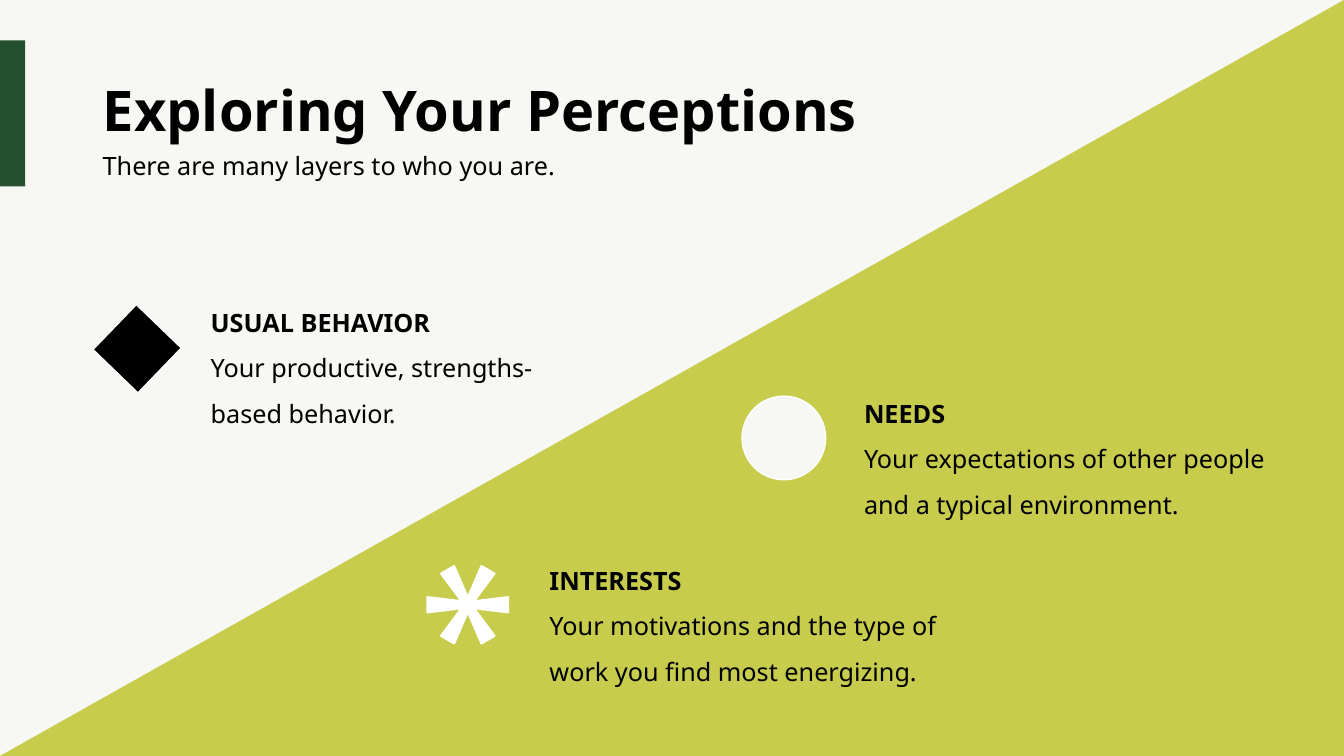
from dataclasses import dataclass
from math import cos, radians, sin

from pptx import Presentation
from pptx.dml.color import RGBColor
from pptx.enum.shapes import MSO_SHAPE
from pptx.enum.text import MSO_ANCHOR, MSO_AUTO_SIZE, PP_ALIGN
from pptx.shapes.autoshape import Shape
from pptx.slide import Slide
from pptx.text.text import TextFrame
from pptx.util import Inches, Pt

RECTANGLE = MSO_SHAPE.RECTANGLE
RIGHT_TRIANGLE = MSO_SHAPE.RIGHT_TRIANGLE
OVAL = MSO_SHAPE.OVAL
MIDDLE = MSO_ANCHOR.MIDDLE
TOP = MSO_ANCHOR.TOP
LEFT = PP_ALIGN.LEFT
NO_AUTOFIT = MSO_AUTO_SIZE.NONE

SLIDE_WIDTH, SLIDE_HEIGHT = 13.33, 7.5


@dataclass(frozen=True)
class Theme:
    font: str = "Noto Sans"
    paper: str = "F7F7F3"
    green: str = "24502F"
    lime: str = "C8CC4D"
    black: str = "000000"
    white: str = "FFFFFF"
    title_size: float = 40
    text_size: float = 18


@dataclass(frozen=True)
class Box:
    left: float
    top: float
    width: float
    height: float

    def lengths(self) -> tuple[int, int, int, int]:
        return (Inches(self.left), Inches(self.top),
                Inches(self.width), Inches(self.height))


@dataclass(frozen=True)
class Layer:
    heading: str
    description: str
    box: Box


THEME = Theme()

LAYERS = (
    Layer("USUAL BEHAVIOR", "Your productive, strengths-based behavior.",
          Box(1.98, 2.84, 4, 1.56)),
    Layer("NEEDS", "Your expectations of other people and a typical environment.",
          Box(8.46, 3.74, 4.53, 1.56)),
    Layer("INTERESTS", "Your motivations and the type of work you find most energizing.",
          Box(5.34, 5.4, 4.53, 1.56)),
)


def style_shape(shape: Shape, fill: str, line_width: float = 0) -> None:
    shape.shadow.inherit = False
    shape.fill.solid()
    shape.fill.fore_color.rgb = RGBColor.from_string(fill)
    if line_width:
        shape.line.color.rgb = RGBColor.from_string(THEME.white)
        shape.line.width = Pt(line_width)
    else:
        shape.line.fill.background()


def add_preset(slide: Slide, preset: MSO_SHAPE, box: Box, fill: str,
               line_width: float = 0) -> Shape:
    shape = slide.shapes.add_shape(preset, *box.lengths())
    style_shape(shape, fill, line_width)
    return shape


def add_asterisk(slide: Slide, center_x: float, center_y: float) -> None:
    """Draw six flared arms, 60 degrees apart."""
    arm = ((0.06, -0.035), (0.4, -0.075), (0.4, 0.075), (0.06, 0.035))
    points = []
    for angle in map(radians, range(0, 360, 60)):
        for x, y in arm:
            points.append((Inches(center_x + x * cos(angle) - y * sin(angle)),
                           Inches(center_y + x * sin(angle) + y * cos(angle))))
    builder = slide.shapes.build_freeform(*points[0])
    builder.add_line_segments(points[1:], close=True)
    style_shape(builder.convert_to_shape(), THEME.white, 1.5)


def write_lines(frame: TextFrame, lines: list[tuple[str, bool]],
                size: float, spacing: float) -> None:
    frame.word_wrap = True
    frame.auto_size = NO_AUTOFIT
    for index, (text, bold) in enumerate(lines):
        paragraph = frame.add_paragraph() if index else frame.paragraphs[0]
        paragraph.alignment = LEFT
        paragraph.line_spacing = spacing
        run = paragraph.add_run()
        run.text = text
        run.font.name = THEME.font
        run.font.size = Pt(size)
        run.font.bold = bold
        run.font.color.rgb = RGBColor.from_string(THEME.black)


def add_layer(slide: Slide, layer: Layer) -> None:
    frame = slide.shapes.add_textbox(*layer.box.lengths()).text_frame
    frame.margin_left = frame.margin_right = Inches(0.11)
    frame.margin_top = frame.margin_bottom = Inches(0.06)
    frame.vertical_anchor = TOP
    write_lines(frame, [(layer.heading, True), (layer.description, False)],
                THEME.text_size, 1.5)


def add_heading(slide: Slide) -> None:
    title = slide.shapes.title
    title.left, title.top, title.width, title.height = Box(0.92, 0.4, 9.08, 1.45).lengths()
    title.text_frame.vertical_anchor = MIDDLE
    write_lines(title.text_frame, [("Exploring Your Perceptions", True)],
                THEME.title_size, 0.9)
    subtitle = slide.shapes.add_textbox(*Box(0.92, 1.44, 6.72, 0.4).lengths())
    write_lines(subtitle.text_frame, [("There are many layers to who you are.", False)],
                THEME.text_size, 1.0)


def main() -> None:
    presentation = Presentation()
    presentation.slide_width = Inches(SLIDE_WIDTH)
    presentation.slide_height = Inches(SLIDE_HEIGHT)
    slide = presentation.slides.add_slide(presentation.slide_layouts.get_by_name("Title Only"))

    # Background, side bar and diagonal field
    slide.background.fill.solid()
    slide.background.fill.fore_color.rgb = RGBColor.from_string(THEME.paper)
    add_preset(slide, RECTANGLE, Box(-0.11, 0.4, 0.36, 1.45), THEME.green)
    field = add_preset(slide, RIGHT_TRIANGLE, Box(0, 0, SLIDE_WIDTH, SLIDE_HEIGHT), THEME.lime)
    field._element.spPr.get_or_add_xfrm().set("flipH", "1")

    # The title placeholder belongs in front of the field
    title_element = slide.shapes.title._element
    title_element.getparent().append(title_element)
    add_heading(slide)

    # Layers and their symbols
    for layer in LAYERS:
        add_layer(slide, layer)
    diamond = add_preset(slide, RECTANGLE, Box(1.05, 3.15, 0.62, 0.62), THEME.black, 1)
    diamond.rotation = 44
    add_preset(slide, OVAL, Box(7.36, 3.93, 0.83, 0.83), THEME.paper, 1)
    add_asterisk(slide, 4.64, 6.0)

    presentation.save("out.pptx")


if __name__ == "__main__":
    main()
